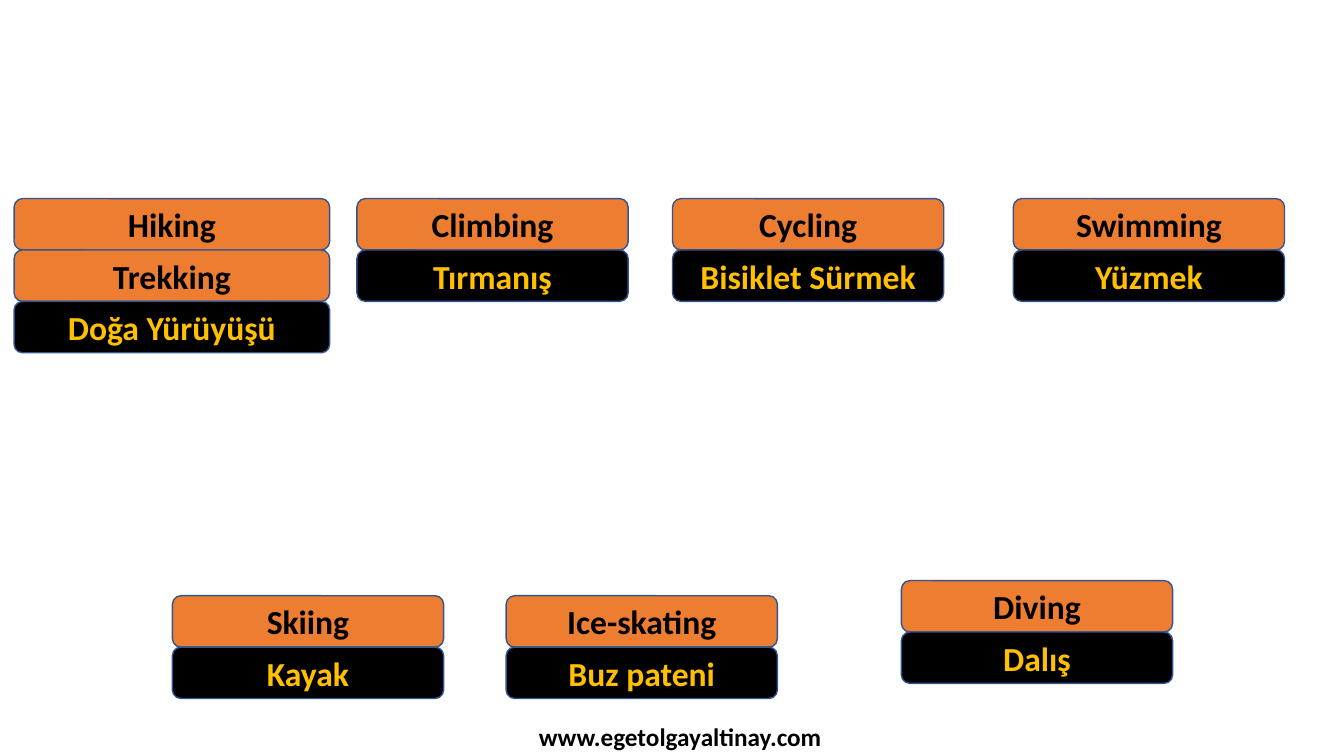
from pptx import Presentation
from pptx.dml.color import RGBColor
from pptx.enum.shapes import MSO_SHAPE
from pptx.enum.text import MSO_ANCHOR, PP_ALIGN
from pptx.util import Inches, Pt

ROUNDED = MSO_SHAPE.ROUNDED_RECTANGLE
MIDDLE = MSO_ANCHOR.MIDDLE
CENTER = PP_ALIGN.CENTER

COLORS = {
    "english": "ED7D31",
    "turkish": "000000",
    "english_text": "000000",
    "turkish_text": "FFC000",
    "outline": "325491",
    "footer_text": "000000",
}
FONT = "Calibri"
SLIDE_WIDTH, SLIDE_HEIGHT = 13.33, 7.5
LABEL_HEIGHT = 0.51
CARD_WIDTH, WIDE_CARD_WIDTH = 2.69, 3.13
TOP_ROW, BOTTOM_ROW, DIVING_ROW = 1.97, 5.91, 5.76

SPORTS = [
    (0.14, TOP_ROW, WIDE_CARD_WIDTH, ["Hiking", "Trekking"], "Doğa Yürüyüşü"),
    (3.54, TOP_ROW, CARD_WIDTH, ["Climbing"], "Tırmanış"),
    (6.67, TOP_ROW, CARD_WIDTH, ["Cycling"], "Bisiklet Sürmek"),
    (10.05, TOP_ROW, CARD_WIDTH, ["Swimming"], "Yüzmek"),
    (1.71, BOTTOM_ROW, CARD_WIDTH, ["Skiing"], "Kayak"),
    (5.02, BOTTOM_ROW, CARD_WIDTH, ["Ice-skating"], "Buz pateni"),
    (8.94, DIVING_ROW, CARD_WIDTH, ["Diving"], "Dalış"),
]


def color(name):
    """Return the named palette colour."""
    return RGBColor.from_string(COLORS[name])


def write_line(shape, text, size, color_name):
    """Write one bold, centred line of text into a shape."""
    para = shape.text_frame.paragraphs[0]
    para.alignment = CENTER
    span = para.add_run()
    span.text = text
    span.font.name = FONT
    span.font.size = Pt(size)
    span.font.bold = True
    span.font.color.rgb = color(color_name)


def add_label(page, box, text, language):
    """Add a rounded label in the colours of its language."""
    label = page.shapes.add_shape(ROUNDED, *map(Inches, box))
    label.shadow.inherit = False
    label.fill.solid()
    label.fill.fore_color.rgb = color(language)
    label.line.color.rgb = color("outline")
    label.line.width = Pt(1)
    label.text_frame.word_wrap = True
    label.text_frame.vertical_anchor = MIDDLE
    write_line(label, text, 24, f"{language}_text")


def add_sport_card(page, box, english_words, turkish_word):
    """Stack the English labels above their Turkish meaning in the box."""
    left, top, width, height = box
    labels = [(word, "english") for word in english_words]
    labels.append((turkish_word, "turkish"))
    pitch = height / len(labels)
    for row, (word, language) in enumerate(labels):
        add_label(page, (left, top + row * pitch, width, pitch), word, language)


def add_footer(page, box):
    """Add the web address at the foot of the page."""
    footer = page.shapes.add_textbox(*map(Inches, box))
    footer.text_frame.word_wrap = True
    write_line(footer, "www.egetolgayaltinay.com", 18, "footer_text")


def main():
    """Build and save the sports vocabulary slide."""
    deck = Presentation()
    deck.slide_width = Inches(SLIDE_WIDTH)
    deck.slide_height = Inches(SLIDE_HEIGHT)
    page = deck.slides.add_slide(deck.slide_layouts[6])
    for left, top, width, english_words, turkish_word in SPORTS:
        height = LABEL_HEIGHT * (len(english_words) + 1)
        add_sport_card(page, (left, top, width, height), english_words, turkish_word)
    add_footer(page, (4.59, 7.11, 4.31, 0.4))
    deck.save("out.pptx")


if __name__ == "__main__":
    main()
